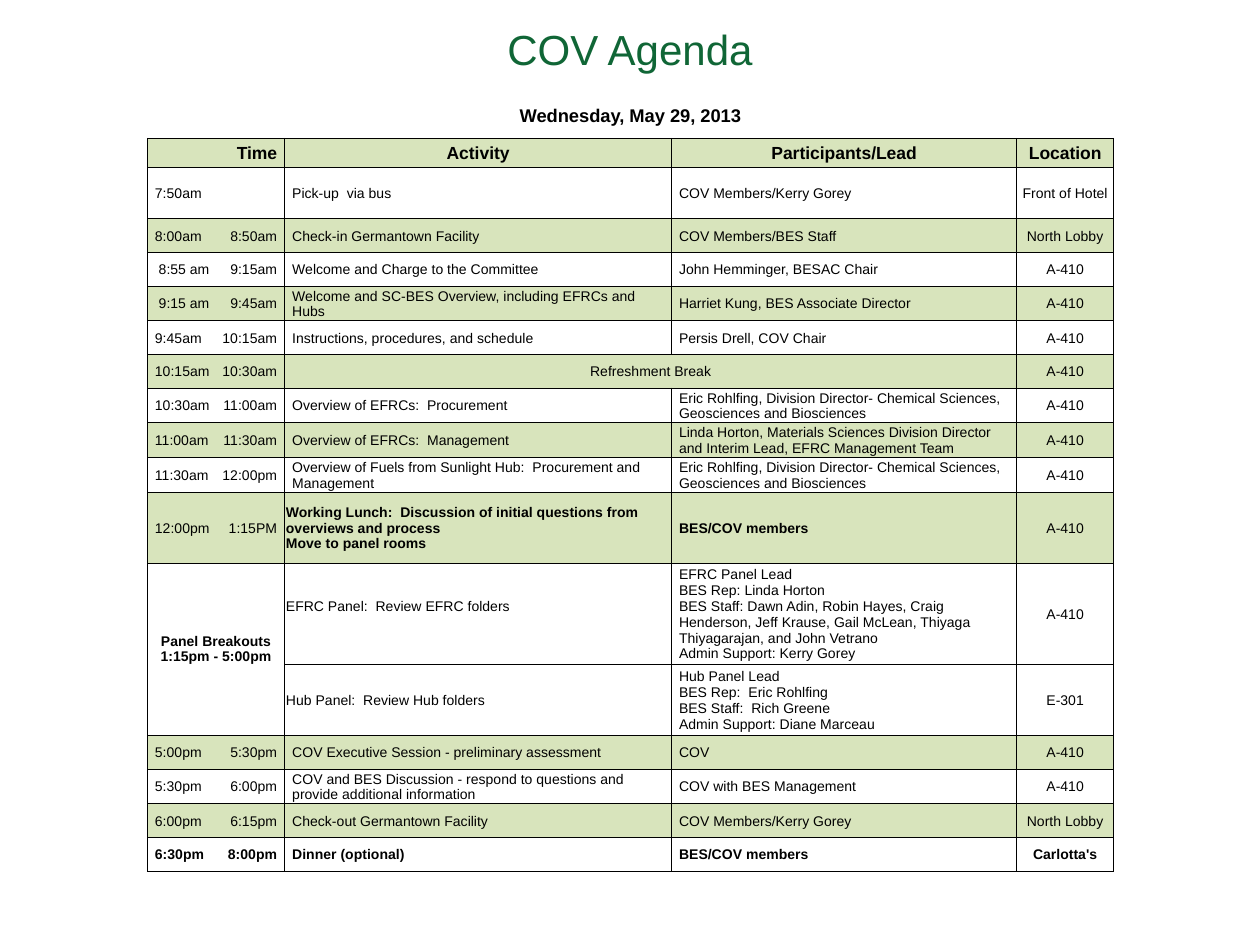
from dataclasses import dataclass

from lxml.etree import SubElement
from pptx import Presentation
from pptx.dml.color import RGBColor
from pptx.enum.text import MSO_ANCHOR as Anchor, PP_ALIGN as Align
from pptx.oxml.ns import qn
from pptx.util import Inches, Pt


@dataclass(frozen=True)
class Theme:
    font: str = "Arial"
    green: str = "106636"
    band: str = "D8E4BC"
    black: str = "000000"
    title: float = 24
    date: float = 10.5
    head: float = 10
    body: float = 8
    rule: float = 0.5


theme = Theme()


def write(frame, text, size, align, bold=False, color=theme.black):
    para = frame.paragraphs[0]
    para.alignment = align
    para.font.size = Pt(size)
    for i, line in enumerate(text.split("\n")):
        if i:
            para.add_line_break()
        run = para.add_run()
        run.text = line
        font = run.font
        font.name, font.size, font.bold = theme.font, Pt(size), bold
        font.color.rgb = RGBColor.from_string(color)


def style(cell, edges, band):
    """Draw the named edges (L, R, T, B) and fill the cell if banded."""
    props = cell._tc.get_or_add_tcPr()
    for side in "LRTB":
        line = SubElement(props, qn(f"a:ln{side}"))
        if side in edges:
            line.set("w", str(Pt(theme.rule)))
            fill = SubElement(line, qn("a:solidFill"))
            SubElement(fill, qn("a:srgbClr")).set("val", theme.black)
        else:
            line.set("w", "0")
            SubElement(line, qn("a:noFill"))
    if band:
        cell.fill.solid()
        cell.fill.fore_color.rgb = RGBColor.from_string(theme.band)
    else:
        cell.fill.background()


chem = "Eric Rohlfing, Division Director- Chemical Sciences, Geosciences and Biosciences"
agenda = [
    ("Wednesday, May 29, 2013", "", "", "", ""),
    ("Time", "", "Activity", "Participants/Lead", "Location"),
    ("7:50am", "", "Pick-up  via bus", "COV Members/Kerry Gorey", "Front of Hotel"),
    ("8:00am", "8:50am", "Check-in Germantown Facility", "COV Members/BES Staff", "North Lobby"),
    ("8:55 am", "9:15am", "Welcome and Charge to the Committee",
     "John Hemminger, BESAC Chair", "A-410"),
    ("9:15 am", "9:45am", "Welcome and SC-BES Overview, including EFRCs and Hubs",
     "Harriet Kung, BES Associate Director", "A-410"),
    ("9:45am", "10:15am", "Instructions, procedures, and schedule",
     "Persis Drell, COV Chair", "A-410"),
    ("10:15am", "10:30am", "Refreshment Break", "", "A-410"),
    ("10:30am", "11:00am", "Overview of EFRCs:  Procurement", chem, "A-410"),
    ("11:00am", "11:30am", "Overview of EFRCs:  Management",
     "Linda Horton, Materials Sciences Division Director and Interim Lead, EFRC Management Team",
     "A-410"),
    ("11:30am", "12:00pm", "Overview of Fuels from Sunlight Hub:  Procurement and Management",
     chem, "A-410"),
    ("12:00pm", "1:15PM",
     "Working Lunch:  Discussion of initial questions from overviews and process\n"
     "Move to panel rooms", "BES/COV members", "A-410"),
    ("Panel Breakouts\n1:15pm - 5:00pm", "", "EFRC Panel:  Review EFRC folders",
     "EFRC Panel Lead\nBES Rep: Linda Horton\nBES Staff: Dawn Adin, Robin Hayes, "
     "Craig Henderson, Jeff Krause, Gail McLean, Thiyaga Thiyagarajan, and John Vetrano\n"
     "Admin Support: Kerry Gorey", "A-410"),
    ("", "", "Hub Panel:  Review Hub folders",
     "Hub Panel Lead\nBES Rep:  Eric Rohlfing\nBES Staff:  Rich Greene\n"
     "Admin Support: Diane Marceau", "E-301"),
    ("5:00pm", "5:30pm", "COV Executive Session - preliminary assessment", "COV", "A-410"),
    ("5:30pm", "6:00pm",
     "COV and BES Discussion - respond to questions and provide additional information",
     "COV with BES Management", "A-410"),
    ("6:00pm", "6:15pm", "Check-out Germantown Facility", "COV Members/Kerry Gorey",
     "North Lobby"),
    ("6:30pm", "8:00pm", "Dinner (optional)", "BES/COV members", "Carlotta's"),
]
DATE, HEAD, PICKUP, BREAK, LUNCH, EFRC, HUB = 0, 1, 2, 7, 11, 12, 13
DINNER = len(agenda) - 1
banded = {HEAD, 3, 5, BREAK, 9, LUNCH, 14, 16}
bold_cells = {(LUNCH, 2), (LUNCH, 3), (EFRC, 0)}
centred = {(DATE, 0), (BREAK, 2), (EFRC, 0)}
tall = {HEAD: 0.23, PICKUP: 0.41, LUNCH: 0.56, EFRC: 0.76, HUB: 0.56}
plain = Inches(3.47) // (len(agenda) - len(tall))  # the other rows share this evenly

deck = Presentation()
deck.slide_width, deck.slide_height = Inches(10), Inches(7.5)
slide = deck.slides.add_slide(deck.slide_layouts[6])

title = slide.shapes.add_textbox(Inches(0), Inches(-0.24), Inches(10), Inches(1.25)).text_frame
title.word_wrap = True
title.vertical_anchor = Anchor.MIDDLE
write(title, "COV Agenda", theme.title, Align.CENTER, color=theme.green)

frame = slide.shapes.add_table(len(agenda), 5, Inches(1.17), Inches(0.83),
                               Inches(7.67), Inches(6))
table = frame.table
table.first_row = table.horz_banding = False
for col, width in zip(table.columns, (0.52, 0.57, 3.07, 2.74, 0.77)):
    col.width = Inches(width)
for i, row in enumerate(table.rows):
    row.height = Inches(tall[i]) if i in tall else plain
for r, first, last in ((DATE, 0, 4), (HEAD, 0, 1), (BREAK, 2, 3), (EFRC, 0, 1)):
    table.cell(r, first).merge(table.cell(r, last))

for r, texts in enumerate(agenda):
    for c, text in enumerate(texts):
        cell = table.cell(r, c)
        edges = {0: "LTB", 1: "TRB"}.get(c, "LRTB")
        if r == DATE:
            edges = "B"
        elif c < 2 and r == EFRC:
            edges = edges.replace("B", "")
        elif c < 2 and r == HUB:
            edges = edges.replace("T", "")
        if cell.is_spanned:
            edges = edges.replace("L", "")
        style(cell, edges, r in banded)

        if (r, c) in centred or c == 4 or (r == HEAD and c):
            align = Align.CENTER
        elif c == 1 or r == HEAD:
            align = Align.RIGHT
        else:
            align = Align.LEFT
        loose = align == Align.LEFT and not (c == 2 and r in (LUNCH, EFRC, HUB))
        left = 0.06 if loose else 0.01
        if text.endswith(" am"):
            left += 0.03
        cell.margin_left = Inches(left)
        cell.margin_right = Inches(0.06 if align == Align.RIGHT else 0.01)
        cell.margin_top = Inches(0.01)
        cell.margin_bottom = Inches(0.13 if (r, c) == (EFRC, 2) else 0)
        cell.vertical_anchor = Anchor.MIDDLE
        if r == DATE:
            cell.vertical_anchor = Anchor.TOP
        elif (r, c) == (EFRC, 0):
            cell.vertical_anchor = Anchor.BOTTOM

        size = {DATE: theme.date, HEAD: theme.head}.get(r, theme.body)
        bold = r in (DATE, HEAD, DINNER) or (r, c) in bold_cells
        if text:
            write(cell.text_frame, text, size, align, bold)
        else:
            cell.text_frame.paragraphs[0].font.size = Pt(size)

deck.save("out.pptx")
